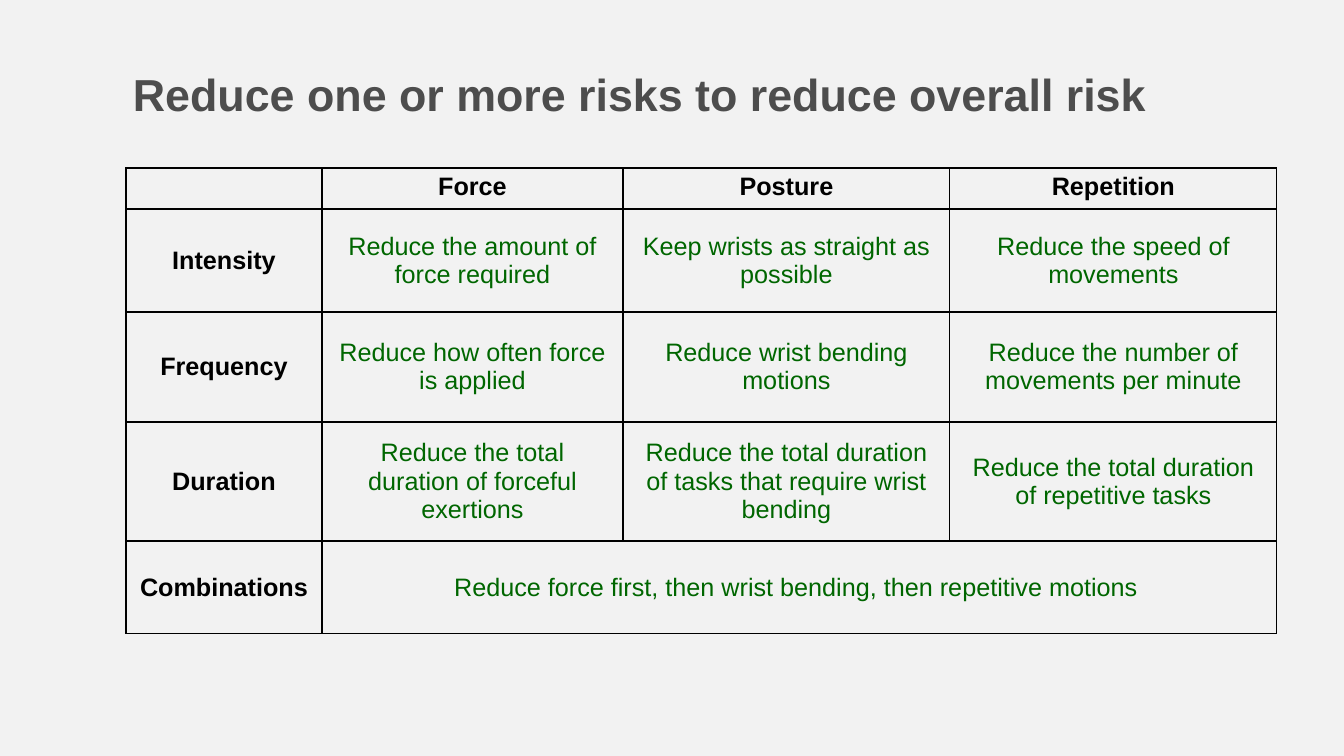
from lxml import etree
from pptx import Presentation, util as u
from pptx.dml.color import RGBColor
from pptx.enum import shapes, text
from pptx.oxml.ns import qn

EMU_PER_PX = 914400 / 100.8
SLIDE_W, SLIDE_H = 1344, 756
FONT = "Arial"
BACKDROP, TITLE, LABEL, ADVICE = "F2F2F2", "4D4D4D", "000000", "006600"

COLUMN_WIDTHS = [196, 301, 327, 327]
ROW_HEIGHTS = [41, 103, 110, 119, 93]
RISK_ROWS = [
    ["", "Force", "Posture", "Repetition"],
    ["Intensity", "Reduce the amount of force required",
     "Keep wrists as straight as possible", "Reduce the speed of movements"],
    ["Frequency", "Reduce how often force is applied",
     "Reduce wrist bending motions", "Reduce the number of movements per minute"],
    ["Duration", "Reduce the total duration of forceful exertions",
     "Reduce the total duration of tasks that require wrist bending",
     "Reduce the total duration of repetitive tasks"],
    ["Combinations", "Reduce force first, then wrist bending, then repetitive motions "],
]


def px(length):
    return u.Emu(round(length * EMU_PER_PX))


def color(hex_string):
    return RGBColor.from_string(hex_string)


def add_words(paragraph, words, size, hex_string, bold):
    run = paragraph.add_run()
    run.text = words
    run.font.name = FONT
    run.font.size = u.Pt(size)
    run.font.bold = bold
    run.font.color.rgb = color(hex_string)


def add_borders(cell):
    properties = cell._tc.get_or_add_tcPr()
    for side in ("a:lnL", "a:lnR", "a:lnT", "a:lnB"):
        line = etree.SubElement(properties, qn(side), w=str(u.Pt(1)))
        fill = etree.SubElement(line, qn("a:solidFill"))
        etree.SubElement(fill, qn("a:srgbClr"), val=LABEL)


def add_backdrop(slide, left, top, width, height):
    backdrop = slide.shapes.add_shape(shapes.MSO_SHAPE.RECTANGLE, px(left), px(top),
                                      px(width), px(height))
    backdrop.shadow.inherit = False
    backdrop.fill.solid()
    backdrop.fill.fore_color.rgb = color(BACKDROP)
    backdrop.line.fill.background()


def add_heading(slide, left, top, width, height):
    frame = slide.shapes.add_textbox(px(left), px(top), px(width), px(height)).text_frame
    frame.word_wrap = True
    frame.vertical_anchor = text.MSO_ANCHOR.MIDDLE
    add_words(frame.paragraphs[0], "Reduce one or more risks to reduce overall risk",
              32, TITLE, True)


def add_risk_table(slide, left, top):
    table = slide.shapes.add_table(
        len(ROW_HEIGHTS), len(COLUMN_WIDTHS), px(left), px(top),
        px(sum(COLUMN_WIDTHS)), px(sum(ROW_HEIGHTS))).table
    table.first_row = table.horz_banding = False
    for column, width in zip(table.columns, COLUMN_WIDTHS):
        column.width = px(width)
    for row, height in zip(table.rows, ROW_HEIGHTS):
        row.height = px(height)

    # Grid lines on clear cells
    for cell in table.iter_cells():
        add_borders(cell)
        cell.fill.background()

    # The combined advice spans every risk
    table.cell(4, 1).merge(table.cell(4, 3))

    # Bold labels along the top and left, advice elsewhere
    for r, row in enumerate(RISK_ROWS):
        for c, words in enumerate(row):
            if not words:
                continue
            cell = table.cell(r, c)
            is_label = r == 0 or c == 0
            if r > 0:
                cell.vertical_anchor = text.MSO_ANCHOR.MIDDLE
            paragraph = cell.text_frame.paragraphs[0]
            paragraph.alignment = text.PP_ALIGN.CENTER
            add_words(paragraph, words, 18, LABEL if is_label else ADVICE, is_label)


def main():
    deck = Presentation()
    deck.slide_width, deck.slide_height = px(SLIDE_W), px(SLIDE_H)
    slide = deck.slides.add_slide(deck.slide_layouts[6])
    add_backdrop(slide, 0, 0, SLIDE_W, SLIDE_H)
    add_heading(slide, 123, 58, 1153, 71)
    add_risk_table(slide, 126, 168)
    deck.save("out.pptx")


if __name__ == "__main__":
    main()
